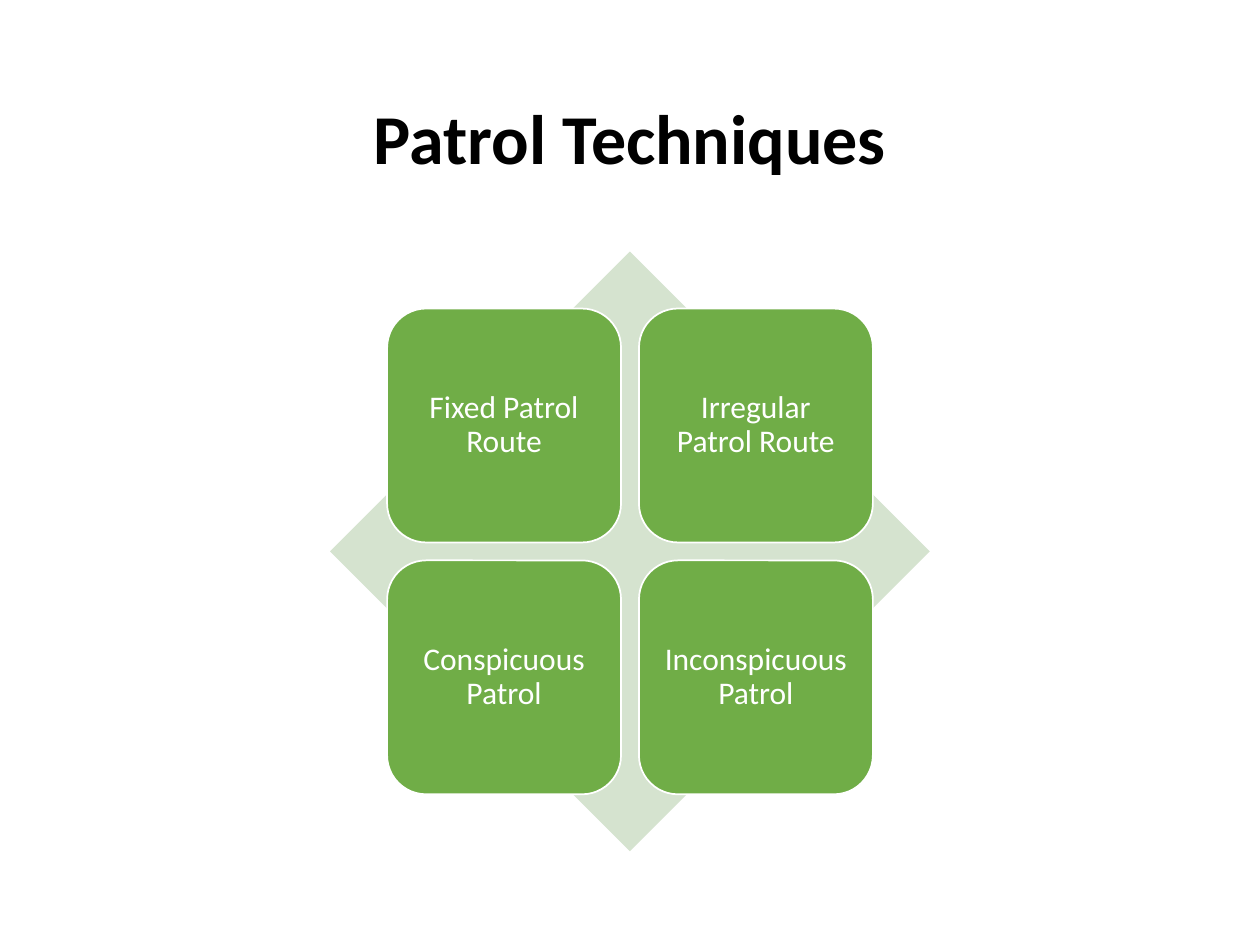
from dataclasses import dataclass

from pptx import Presentation
from pptx.dml.color import RGBColor
from pptx.enum.shapes import MSO_SHAPE
from pptx.enum.text import MSO_ANCHOR, PP_ALIGN
from pptx.util import Pt

DIAMOND = MSO_SHAPE.DIAMOND
ROUND = MSO_SHAPE.ROUNDED_RECTANGLE
MIDDLE = MSO_ANCHOR.MIDDLE
CENTER = PP_ALIGN.CENTER


@dataclass(frozen=True)
class Theme:
    face: str = "Calibri"
    ink: str = "000000"
    white: str = "FFFFFF"
    green: str = "70AD47"
    pale: str = "D5E3CF"
    head: float = 40
    body: float = 18


THEME = Theme()


def color(code):
    return RGBColor.from_string(code)


def apply(target, values):
    for name, value in values.items():
        setattr(target, name, value)


def write(shape, text, size, ink, inset, bold=False):
    frame = shape.text_frame
    frame.text = text
    sides = ("left", "top", "right", "bottom")
    apply(frame, {f"margin_{side}": Pt(inset) for side in sides})
    apply(frame, {"word_wrap": True, "vertical_anchor": MIDDLE})
    para = frame.paragraphs[0]
    apply(para, {"alignment": CENTER, "line_spacing": 0.9})
    font = para.runs[0].font
    apply(font, {"name": THEME.face, "size": Pt(size), "bold": bold})
    font.color.rgb = color(ink)


def add_block(slide, kind, box, fill):
    shape = slide.shapes.add_shape(kind, *map(Pt, box))
    shape.shadow.inherit = False
    shape.fill.solid()
    shape.fill.fore_color.rgb = color(fill)
    shape.line.fill.background()
    return shape


def add_title(slide, box, text):
    title = slide.shapes.title
    names = ("left", "top", "width", "height")
    apply(title, dict(zip(names, map(Pt, box))))
    write(title, text, THEME.head, THEME.ink, 5, True)


def add_matrix(slide, box, labels):
    left, top, side, _ = box
    add_block(slide, DIAMOND, box, THEME.pale)
    inset, tile, step = side * 0.095, side * 0.39, side * 0.42
    for index, label in enumerate(labels):
        row, col = divmod(index, 2)
        place = (left + inset + col * step, top + inset + row * step, tile, tile)
        shape = add_block(slide, ROUND, place, THEME.green)
        shape.line.color.rgb = color(THEME.white)
        shape.line.width = Pt(1)
        write(shape, label, THEME.body, THEME.white, 5.7)


def main():
    deck = Presentation()
    apply(deck, {"slide_width": Pt(720), "slide_height": Pt(540)})
    slide = deck.slides.add_slide(deck.slide_layouts[5])
    add_title(slide, (49.5, 28.75, 621, 104.4), "Patrol Techniques")
    labels = (
        "Fixed Patrol Route",
        "Irregular Patrol Route",
        "Conspicuous Patrol",
        "Inconspicuous Patrol",
    )
    add_matrix(slide, (188.65, 143.75, 342.7, 342.7), labels)
    deck.save("out.pptx")


if __name__ == "__main__":
    main()
